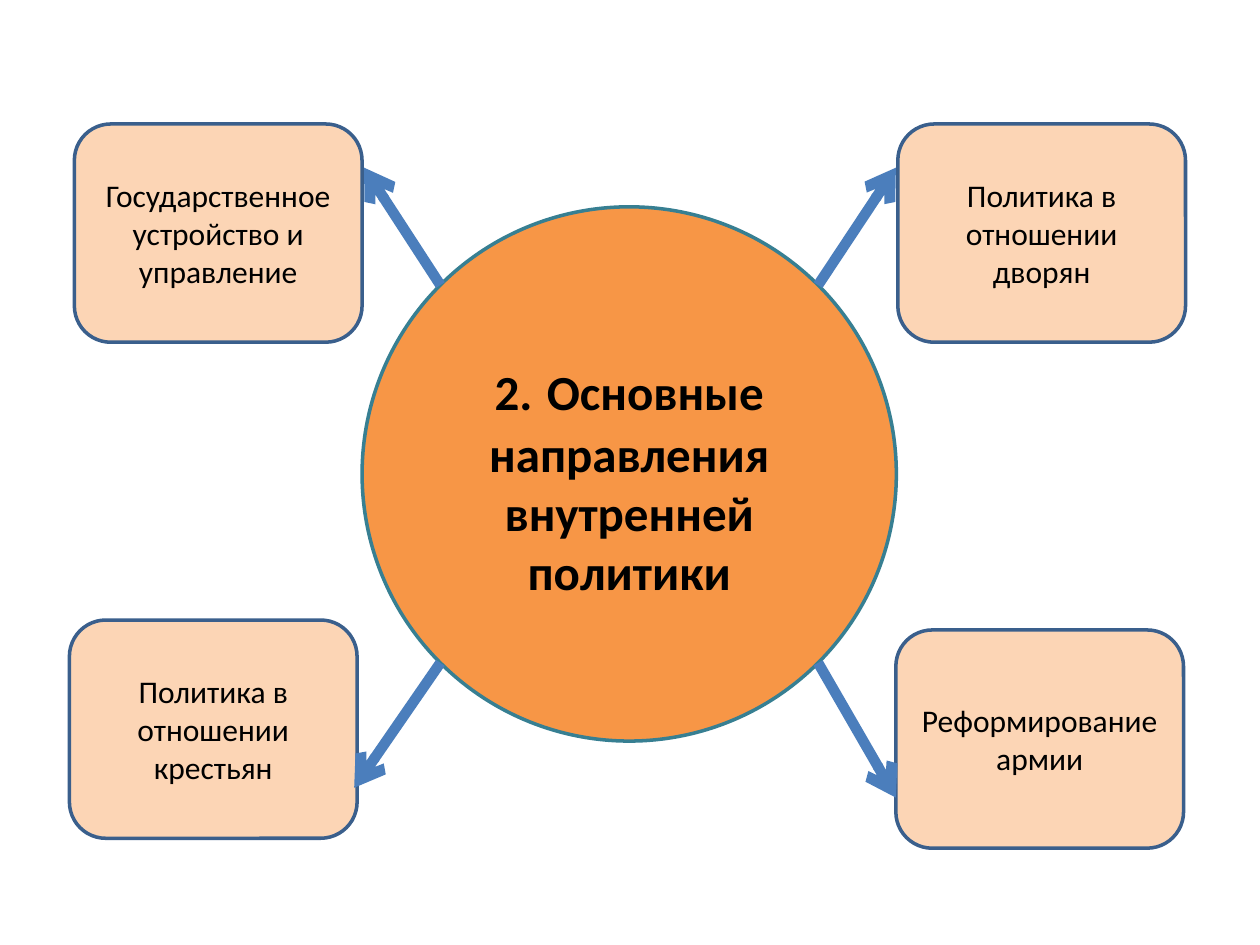
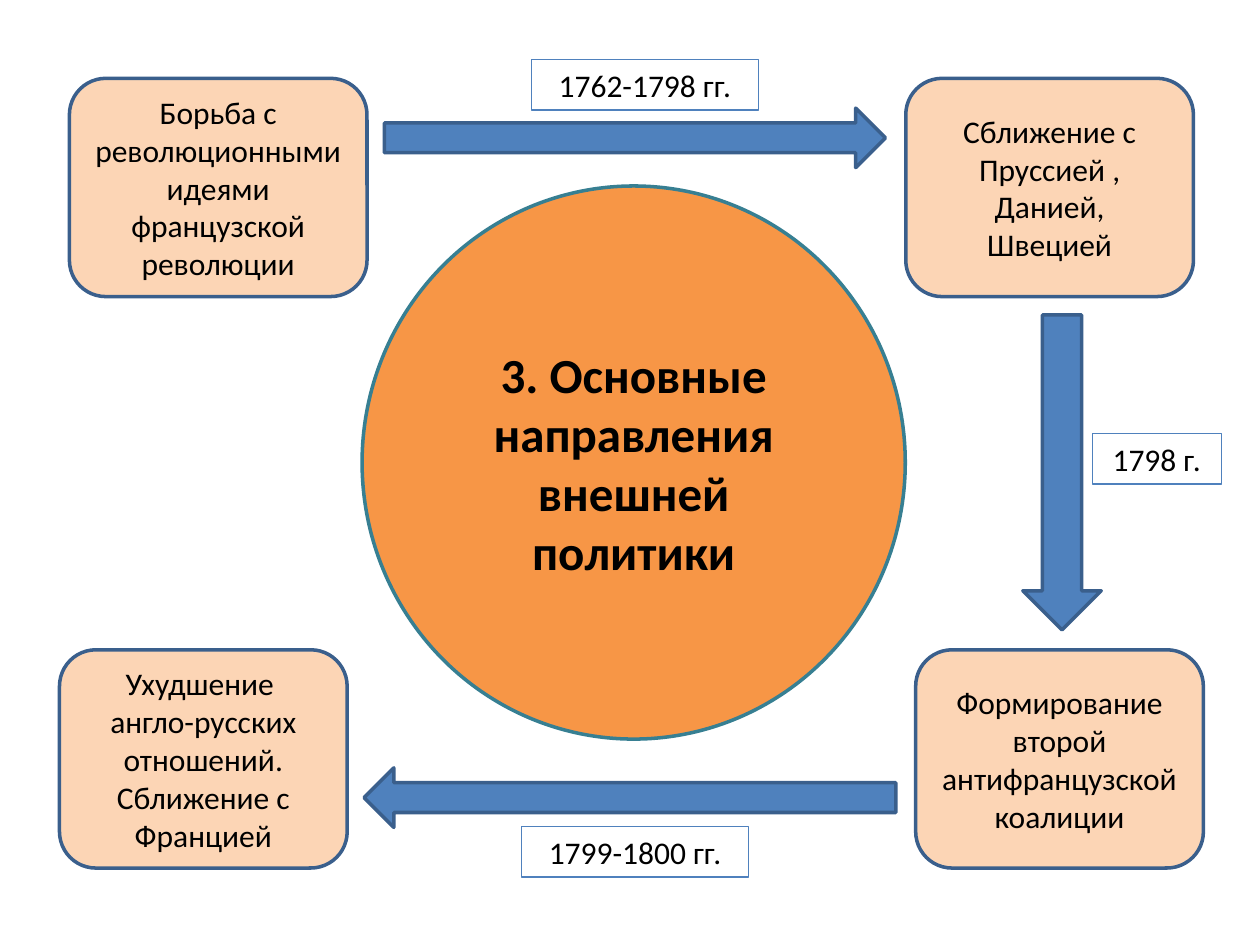
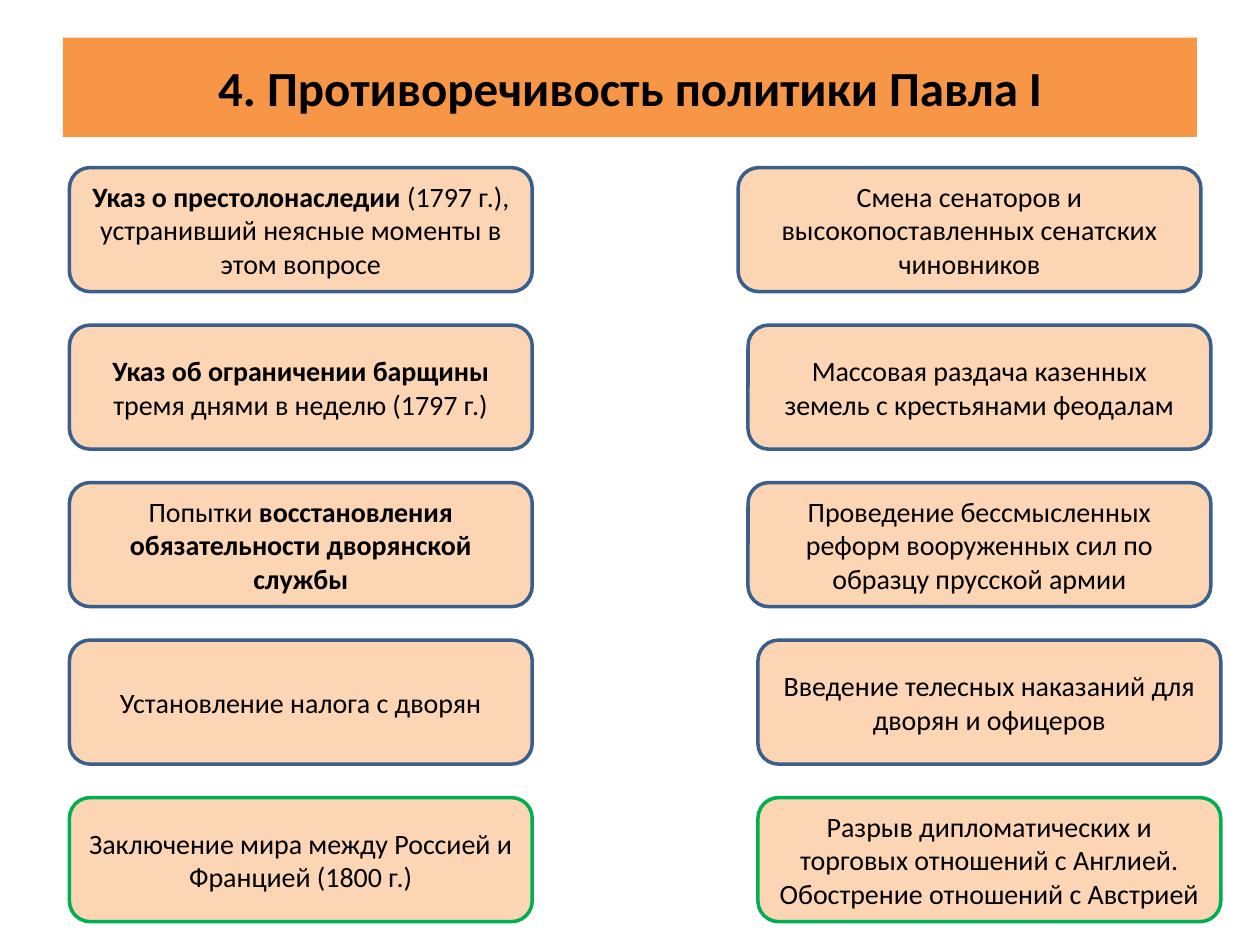
from math import sqrt

from lxml.etree import SubElement
from pptx import Presentation
from pptx.dml.color import RGBColor
from pptx.enum.shapes import MSO_CONNECTOR, MSO_SHAPE
from pptx.enum.text import MSO_ANCHOR, PP_ALIGN
from pptx.oxml.ns import qn
from pptx.util import Cm, Pt

# Shared look
FONT = "Calibri"
BLACK = "000000"
ORANGE = "F79646"
PEACH = "FCD5B5"
TEAL = "377F92"
NAVY = "3A5F8C"
BLUE = "4F81BD"
ARROW_BLUE = "4B7EBC"
GREEN = "00B050"
HEADING_SIZE = 28
BOX_W, BOX_H = 5.8, 4.4


def rgb(value):
    return RGBColor.from_string(value)


def write_text(sp, paragraphs, size=18, bold=False, anchor=MSO_ANCHOR.MIDDLE):
    """Each paragraph is a string or a list of (text, format overrides)."""
    tf = sp.text_frame
    tf.word_wrap = True
    tf.vertical_anchor = anchor
    if isinstance(paragraphs, str):
        paragraphs = [paragraphs]
    for i, runs in enumerate(paragraphs):
        p = tf.paragraphs[0] if i == 0 else tf.add_paragraph()
        p.alignment = PP_ALIGN.CENTER
        if isinstance(runs, str):
            runs = [(runs, {})]
        for text, override in runs:
            r = p.add_run()
            r.text = text
            r.font.name = FONT
            r.font.size = Pt(override.get("size", size))
            r.font.bold = override.get("bold", bold)
            r.font.color.rgb = rgb(BLACK)


def add_block(s, kind, x, y, w, h, fill, line=None):
    sp = s.shapes.add_shape(kind, Cm(x), Cm(y), Cm(w), Cm(h))
    sp.shadow.inherit = False
    sp.fill.solid()
    sp.fill.fore_color.rgb = rgb(fill)
    if line:
        sp.line.color.rgb = rgb(line)
        sp.line.width = Pt(2)
    else:
        sp.line.fill.background()
    return sp


def add_circle(s, x, y, w, h, text):
    sp = add_block(s, MSO_SHAPE.OVAL, x, y, w, h, ORANGE, TEAL)
    write_text(sp, text, size=HEADING_SIZE, bold=True)


def add_card(s, x, y, text, w=BOX_W, h=BOX_H, line=NAVY, size=18):
    sp = add_block(s, MSO_SHAPE.ROUNDED_RECTANGLE, x, y, w, h, PEACH, line)
    write_text(sp, text, size=size)


def add_date(s, x, y, w, text):
    sp = s.shapes.add_textbox(Cm(x), Cm(y), Cm(w), Cm(1.02))
    sp.line.color.rgb = rgb(BLUE)
    sp.line.width = Pt(0.75)
    write_text(sp, text, anchor=MSO_ANCHOR.TOP)


def add_arrow(s, x1, y1, x2, y2):
    cn = s.shapes.add_connector(MSO_CONNECTOR.STRAIGHT, Cm(x1), Cm(y1), Cm(x2), Cm(y2))
    cn.line.color.rgb = rgb(ARROW_BLUE)
    cn.line.width = Pt(6)
    SubElement(cn.line._get_or_add_ln(), qn("a:tailEnd"), type="arrow")
    SubElement(cn._element.spPr, qn("a:effectLst"))


def build_domestic(s):
    x, y, d = 7.3, 4.17, 10.77
    add_circle(s, x, y, d, d, [[
        ("2.", {}), (" ", {"size": 36}),
        ("Основные направления внутренней политики", {})]])

    # Direction, card corner, arrow tip
    directions = [
        (-1, -1, (1.5, 2.5), (7.34, 3.38), "Государственное устройство и управление"),
        (1, -1, (18.1, 2.5), (18.06, 3.38), "Политика в отношении дворян"),
        (-1, 1, (1.4, 12.5), (7.14, 15.88), "Политика в отношении крестьян"),
        (1, 1, (18.06, 12.7), (18.06, 16.08), "Реформирование армии"),
    ]
    reach = d / 2 / sqrt(2)
    for dx, dy, corner, tip, text in directions:
        add_card(s, *corner, text)
        add_arrow(s, x + d / 2 + dx * reach, y + d / 2 + dy * reach, *tip)


def build_foreign(s):
    add_circle(s, 7.3, 3.75, 10.95, 11.15, "3. Основные направления внешней политики")

    # Stages
    add_card(s, 1.4, 1.58, "Борьба с революционными идеями французской революции", w=6)
    add_card(s, 18.26, 1.58, "Сближение с Пруссией , Данией, Швецией")
    add_card(s, 1.2, 13.1, ["Ухудшение ", "англо-русских отношений. Сближение с Францией"])
    add_card(s, 18.46, 13.1, "Формирование второй антифранцузской коалиции")

    # Transitions and their dates
    for kind, *place in [
        (MSO_SHAPE.RIGHT_ARROW, 7.75, 2.18, 10.1, 1.2),
        (MSO_SHAPE.DOWN_ARROW, 20.62, 6.35, 1.58, 6.35),
        (MSO_SHAPE.LEFT_ARROW, 7.34, 15.48, 10.72, 1.2),
    ]:
        add_block(s, kind, *place, BLUE, NAVY)
    add_date(s, 10.72, 1.2, 4.57, "1762-1798 гг.")
    add_date(s, 22.02, 8.74, 2.6, "1798 г.")
    add_date(s, 10.52, 16.66, 4.57, "1799-1800 гг.")


def build_contradictions(s):
    title = add_block(s, MSO_SHAPE.RECTANGLE, 1.27, 0.76, 22.86, 2, ORANGE)
    write_text(title, "4. Противоречивость политики Павла I", size=HEADING_SIZE, bold=True)

    # Left text, left edge of the right card, right text, outline
    strong = {"bold": True}
    rows = [
        ([[("Указ о престолонаследии ", strong),
           ("(1797 г.), устранивший неясные моменты в этом вопросе", {})]],
         14.88, "Смена сенаторов и высокопоставленных сенатских чиновников", NAVY),
        ([[("Указ об ограничении барщины ", strong),
           ("тремя днями в неделю (1797 г.)", {})]],
         15.08, "Массовая раздача казенных земель с крестьянами феодалам", NAVY),
        ([[("Попытки ", {}), ("восстановления обязательности дворянской службы", strong)]],
         15.08, "Проведение бессмысленных реформ вооруженных сил по образцу прусской армии",
         NAVY),
        ("Установление налога с дворян",
         15.28, "Введение телесных наказаний для дворян и офицеров", NAVY),
        ("Заключение мира между Россией и Францией (1800 г.)",
         15.28, "Разрыв дипломатических и торговых отношений с Англией. "
         "Обострение отношений с Австрией", GREEN),
    ]
    for i, (left, right_x, right, line) in enumerate(rows):
        for x, text in ((1.4, left), (right_x, right)):
            add_card(s, x, 3.38 + 3.175 * i, text, w=9.33, h=2.5, line=line, size=16)


def main():
    prs = Presentation()
    prs.slide_width, prs.slide_height = Cm(25.4), Cm(19.05)
    for build in (build_domestic, build_foreign, build_contradictions):
        build(prs.slides.add_slide(prs.slide_layouts[6]))
    prs.save("out.pptx")


if __name__ == "__main__":
    main()
